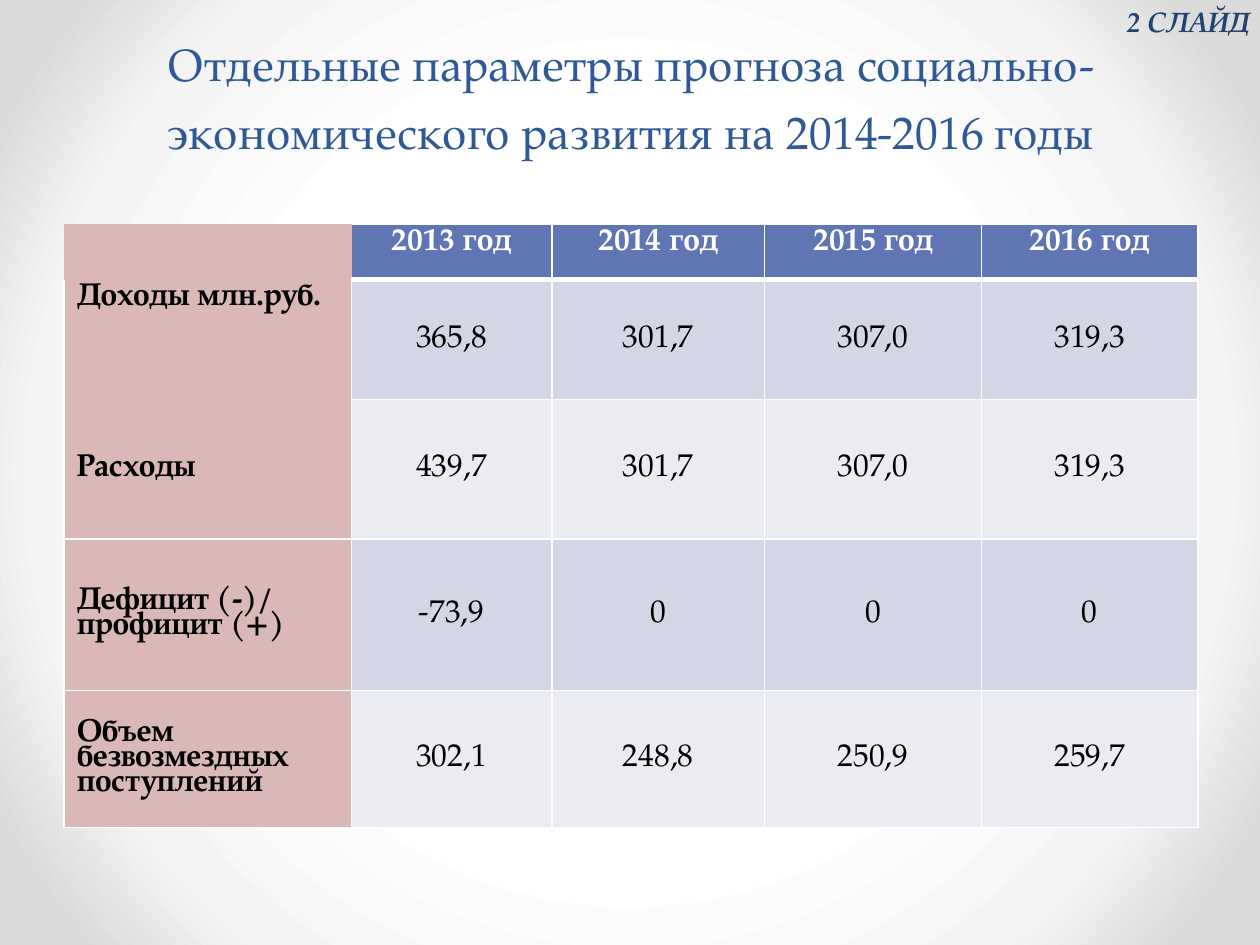
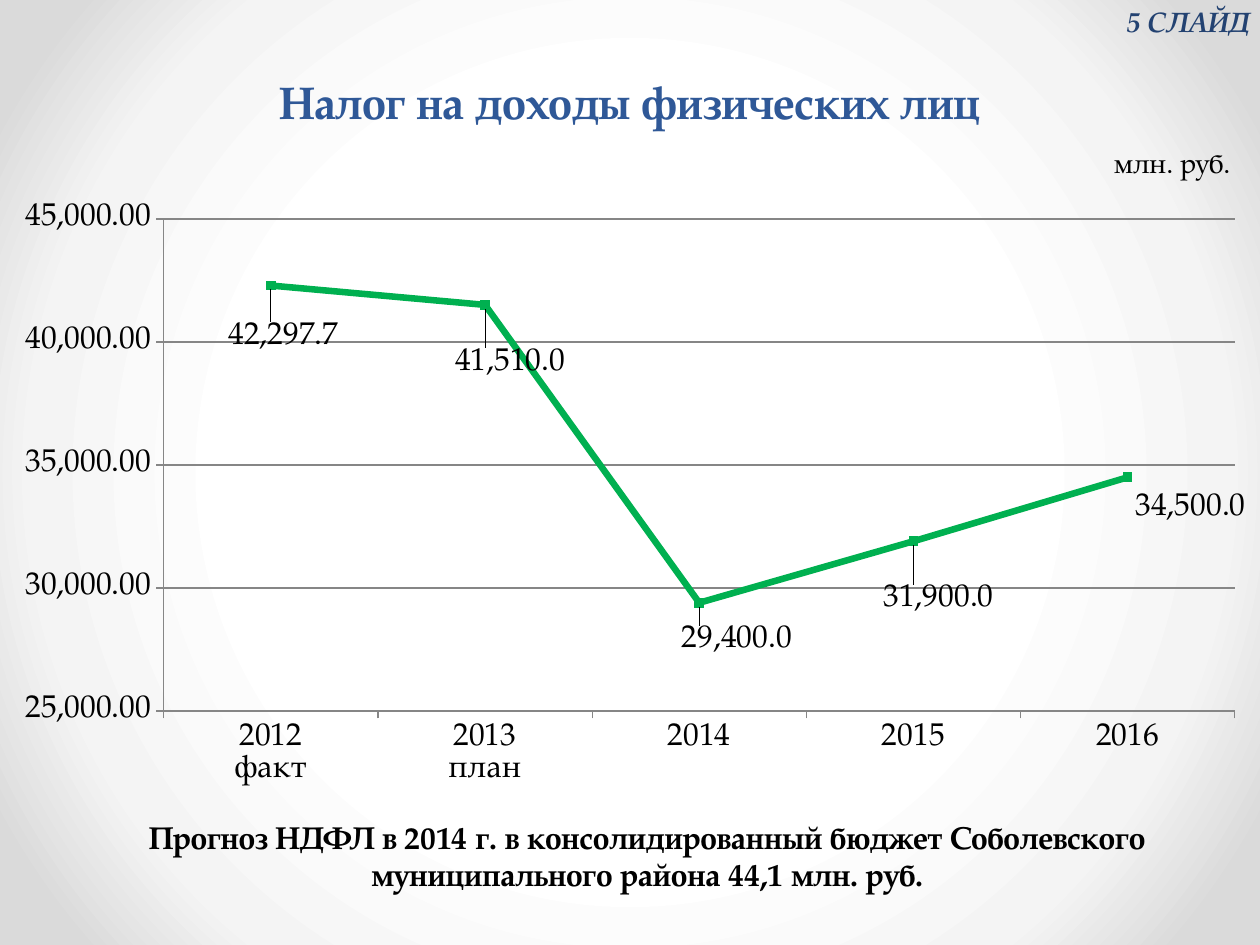
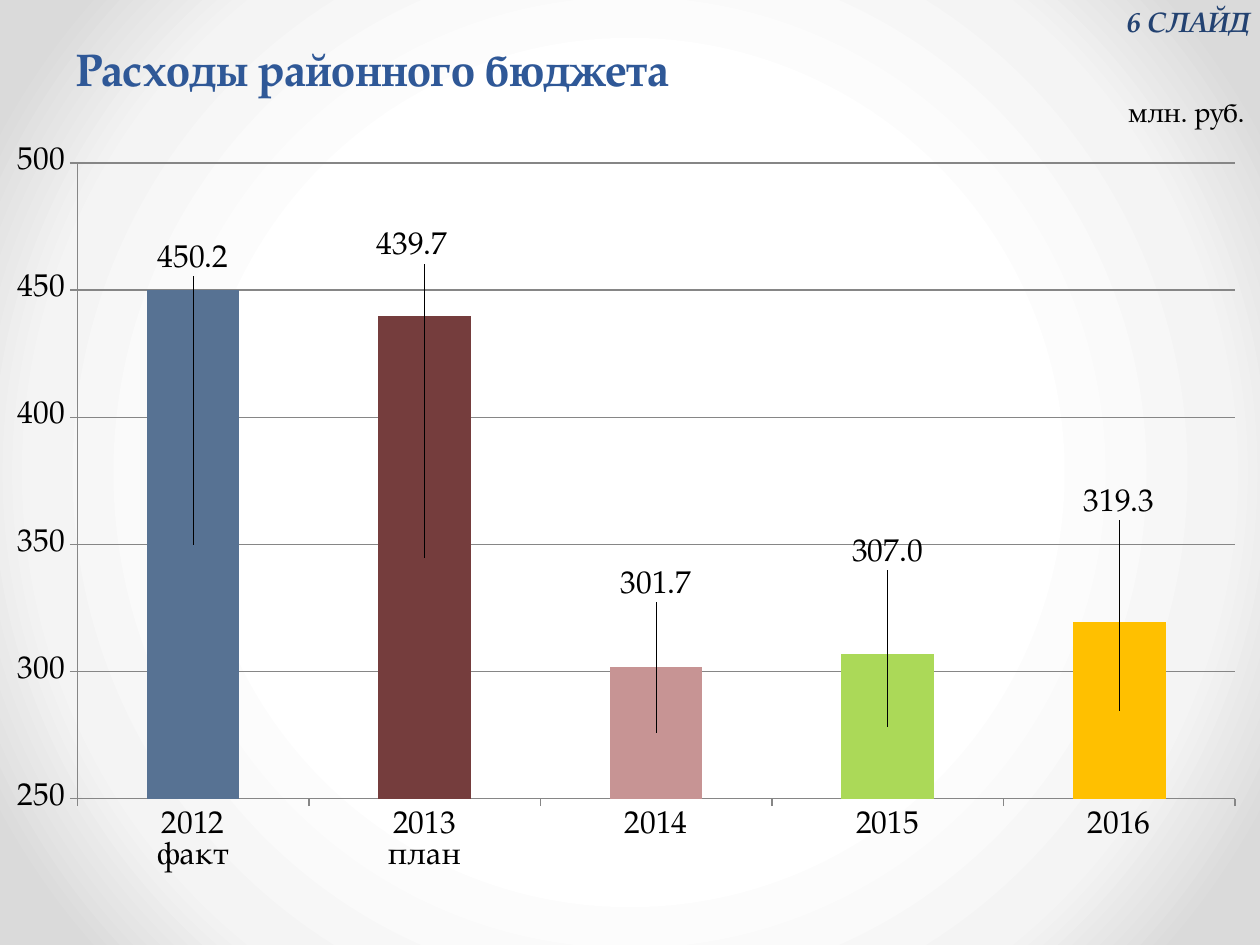
from lxml import etree
from pptx import Presentation
from pptx.chart.data import CategoryChartData
from pptx.dml.color import RGBColor
from pptx.enum.chart import XL_CHART_TYPE, XL_LABEL_POSITION, XL_MARKER_STYLE, XL_TICK_MARK
from pptx.enum.text import MSO_ANCHOR, PP_ALIGN
from pptx.oxml import parse_xml
from pptx.oxml.ns import nsdecls, qn
from pptx.util import Inches, Pt

LEFT, CENTER, RIGHT = PP_ALIGN.LEFT, PP_ALIGN.CENTER, PP_ALIGN.RIGHT
TOP, MIDDLE, BOTTOM = MSO_ANCHOR.TOP, MSO_ANCHOR.MIDDLE, MSO_ANCHOR.BOTTOM
LINE, COLUMN = XL_CHART_TYPE.LINE_MARKERS, XL_CHART_TYPE.COLUMN_STACKED
BELOW, INSIDE = XL_LABEL_POSITION.BELOW, XL_LABEL_POSITION.CENTER
SQUARE, OUTSIDE = XL_MARKER_STYLE.SQUARE, XL_TICK_MARK.OUTSIDE

FONT = "TeX Gyre Pagella"
BLACK, WHITE, GRAY = "000000", "FFFFFF", "868686"
BLUE, NAVY, GREEN = "2F5897", "234271", "00B050"
HEAD, SIDE, BANDS = "6076B4", "DAB8B8", ("D2D6E5", "EAECF2")
STOPS = [(50, "FFFFFF"), (76, "F4F4F4"), (92, "DADADA")]

COLS = [2.28, 1.59, 1.69, 1.72, 1.72]
HIGHS = [0.44, 0.95, 1.11, 1.2, 1.09]
ROWS = [
    ["", "2013 год", "2014 год", "2015 год", "2016 год"],
    ["Доходы млн.руб.", "365,8", "301,7", "307,0", "319,3"],
    ["Расходы", "439,7", "301,7", "307,0", "319,3"],
    ["Дефицит (-)/\nпрофицит (+)", "-73,9", "0", "0", "0"],
    ["Объем безвозмездных поступлений", "302,1", "248,8", "250,9", "259,7"],
]

UNIT = "млн. руб."
YEARS = ["2012\nфакт", "2013\nплан", "2014", "2015", "2016"]
TAX = {
    "kind": LINE, "box": (0, 0.99, 10, 5.35),
    "vals": [42297.7, 41510, 29400, 31900, 34500],
    "scale": (25000, 45000, 5000), "form": "#,##0.00",
    "head": (0.88, 0.03), "plot": (0.13, 0.14, 0.85, 0.73), "spot": BELOW,
    "moves": [(0.01, 0.04), (0.02, 0.05), (0.03, 0.02), (0.02, 0.05), (0.05, 0.01)],
}
COSTS = {
    "kind": COLUMN, "box": (0.12, 0.68, 9.88, 6.82),
    "vals": [450.2, 439.7, 301.7, 307, 319.3],
    "scale": (250, 500, 50), "form": "#,##0",
    "head": (0.89, 0.01), "plot": (0.05, 0.09, 0.93, 0.74), "spot": INSIDE,
    "moves": [(0, -0.33), (-0.01, -0.36), (0, -0.17), (0, -0.2), (0, -0.24)],
}
HUES = ["577293", "753D3D", "C79494", "ABD958", "FFC000"]
NOTE = ("Прогноз НДФЛ в 2014 г. в консолидированный бюджет "
        "Соболевского муниципального района 44,1 млн. руб.")


def color(code):
    return RGBColor.from_string(code)


def write(frame, text, size=18, hue=BLACK, bold=False, slant=False,
          align=LEFT, lead=None):
    for i, part in enumerate(text.split("\n")):
        para = frame.add_paragraph() if i else frame.paragraphs[0]
        para.alignment = align
        if lead:
            para.line_spacing = lead
        run = para.add_run()
        run.text = part
        font = run.font
        font.name, font.size, font.bold, font.italic = FONT, Pt(size), bold, slant
        font.color.rgb = color(hue)


def add_text(slide, box, text, anchor=TOP, right=0.1, base=0.05, **style):
    frame = slide.shapes.add_textbox(*map(Inches, box)).text_frame
    frame.word_wrap = True
    frame.vertical_anchor = anchor
    frame.margin_right, frame.margin_bottom = Inches(right), Inches(base)
    write(frame, text, **style)


def add_title(slide, box, text, **style):
    add_text(slide, box, text, anchor=BOTTOM, size=26, hue=BLUE, **style)


def add_page(deck, number):
    slide = deck.slides.add_slide(deck.slide_layouts[6])
    add_text(slide, (8.72, -0.01, 1.36, 0.37), f"{number} СЛАЙД", right=0.16,
             size=16, hue=NAVY, bold=True, slant=True, align=RIGHT)
    return slide


def set_back(master):
    master.background.fill.gradient()
    grad = master.element.find(".//" + qn("p:bgPr")).find(qn("a:gradFill"))
    stops = "".join(f'<a:gs pos="{pos * 1000}"><a:srgbClr val="{hue}"/></a:gs>'
                    for pos, hue in STOPS)
    new = parse_xml(
        f'<a:gradFill {nsdecls("a")} rotWithShape="1"><a:gsLst>{stops}</a:gsLst>'
        '<a:path path="circle"><a:fillToRect l="50000" t="50000" r="50000" b="50000"/>'
        '</a:path></a:gradFill>')
    grad.getparent().replace(grad, new)


def set_edges(cell, widths):
    props = cell._tc.get_or_add_tcPr()
    for i, (side, width) in enumerate(zip("LRTB", widths)):
        edge = etree.Element(qn("a:ln" + side), w=str(Pt(width)))
        if width:
            fill = etree.SubElement(edge, qn("a:solidFill"))
            etree.SubElement(fill, qn("a:srgbClr"), val=WHITE)
        else:
            etree.SubElement(edge, qn("a:noFill"))
        props.insert(i, edge)


def find_edges(r, c):
    if c == 0:
        return [(0, 0, 0, 0), (1, 1, 0, 0), (1, 1, 0, 1)][min(r, 2)] if r < 3 else (1, 1, 1, 1)
    if r == 0:
        return (int(c > 1), 1, 1, 3)
    return (1, 1, 3 if r == 1 else 1, 1)


def add_grid(slide):
    box = (0.51, 1.78, sum(COLS), sum(HIGHS))
    table = slide.shapes.add_table(len(ROWS), len(COLS), *map(Inches, box)).table
    for col, width in zip(table.columns, COLS):
        col.width = Inches(width)
    for r, row in enumerate(ROWS):
        table.rows[r].height = Inches(HIGHS[r])
        for c, text in enumerate(row):
            cell = table.cell(r, c)
            cell.fill.solid()
            fill = SIDE if c == 0 else HEAD if r == 0 else BANDS[(r - 1) % 2]
            cell.fill.fore_color.rgb = color(fill)
            cell.vertical_anchor = TOP if r == 0 or (r, c) == (1, 0) else MIDDLE
            set_edges(cell, find_edges(r, c))
            if text:
                write(cell.text_frame, text, hue=BLACK if r else WHITE,
                      bold=r == 0 or c == 0, align=CENTER if c else LEFT, lead=0.8)


def place(parent, index, spots, mode="", target=""):
    old = parent.find(qn("c:layout"))
    if old is not None:
        parent.remove(old)
    layout = etree.Element(qn("c:layout"))
    manual = etree.SubElement(layout, qn("c:manualLayout"))
    if target:
        etree.SubElement(manual, qn("c:layoutTarget"), val=target)
    if mode:
        for name in ("xMode", "yMode"):
            etree.SubElement(manual, qn("c:" + name), val=mode)
    for name, spot in zip("xywh", spots):
        etree.SubElement(manual, qn("c:" + name), val=str(spot))
    parent.insert(index, layout)


def set_line(line, hue, width):
    line.color.rgb = color(hue)
    line.width = Pt(width)


def add_graph(slide, info):
    data = CategoryChartData()
    data.categories = YEARS
    data.add_series("Series 1", info["vals"])
    chart = slide.shapes.add_chart(info["kind"], *map(Inches, info["box"]), data).chart
    chart.has_legend = False
    chart.font.name, chart.font.size = FONT, Pt(18)
    chart.font.color.rgb = color(BLACK)

    chart.has_title = True
    title = chart.chart_title
    write(title.text_frame, UNIT, size=16)
    place(title._element, 1, info["head"], "edge")
    area = chart._chartSpace.find(".//" + qn("c:plotArea"))
    place(area, 0, info["plot"], "edge", "inner")

    scale = chart.value_axis
    scale.minimum_scale, scale.maximum_scale, scale.major_unit = info["scale"]
    scale.tick_labels.number_format = info["form"]
    scale.tick_labels.number_format_is_linked = False
    set_line(scale.major_gridlines.format.line, GRAY, 0.75)
    for axis in (scale, chart.category_axis):
        axis.major_tick_mark = OUTSIDE
        set_line(axis.format.line, GRAY, 0.75)

    plot = chart.plots[0]
    plot.vary_by_categories = False
    series = plot.series[0]
    labels = series.data_labels
    labels.show_value = True
    labels.number_format, labels.number_format_is_linked = "#,##0.0", False
    for i, move in enumerate(info["moves"]):
        series.points[i].data_label.position = info["spot"]
    for label, move in zip(labels._element.findall(qn("c:dLbl")), info["moves"]):
        place(label, 1, move)
        form = etree.Element(qn("c:numFmt"), formatCode="#,##0.0", sourceLinked="0")
        label.insert(2, form)
    return plot, series


def add_curve(slide):
    series = add_graph(slide, TAX)[1]
    series.smooth = False
    set_line(series.format.line, GREEN, 3.75)
    mark = series.marker
    mark.style, mark.size = SQUARE, 5
    mark.format.fill.solid()
    mark.format.fill.fore_color.rgb = color(GREEN)
    set_line(mark.format.line, GREEN, 0.75)


def add_bars(slide):
    plot, series = add_graph(slide, COSTS)
    plot.gap_width, plot.overlap = 150, 100
    for i, hue in enumerate(HUES):
        fill = series.points[i].format.fill
        fill.solid()
        fill.fore_color.rgb = color(hue)


def main():
    deck = Presentation()
    deck.slide_width, deck.slide_height = Inches(10), Inches(7.5)
    set_back(deck.slide_master)

    slide = add_page(deck, 2)
    add_title(slide, (0.51, 0.44, 9, 0.87),
              "Отдельные параметры прогноза социально-экономического развития "
              "на 2014-2016 годы", align=CENTER, lead=Pt(39))
    add_grid(slide)

    slide = add_page(deck, 5)
    add_title(slide, (0.5, 0, 9, 1.07), "Налог на доходы физических лиц",
              bold=True, align=CENTER, lead=Pt(58))
    add_curve(slide)
    add_text(slide, (0.89, 6.44, 8.5, 0.71), NOTE, bold=True, align=CENTER)

    slide = add_page(deck, 6)
    add_title(slide, (0.51, 0.36, 9, 1.26), "Расходы районного бюджета",
              base=0.86, bold=True, lead=Pt(58))
    add_bars(slide)
    deck.save("out.pptx")


if __name__ == "__main__":
    main()
